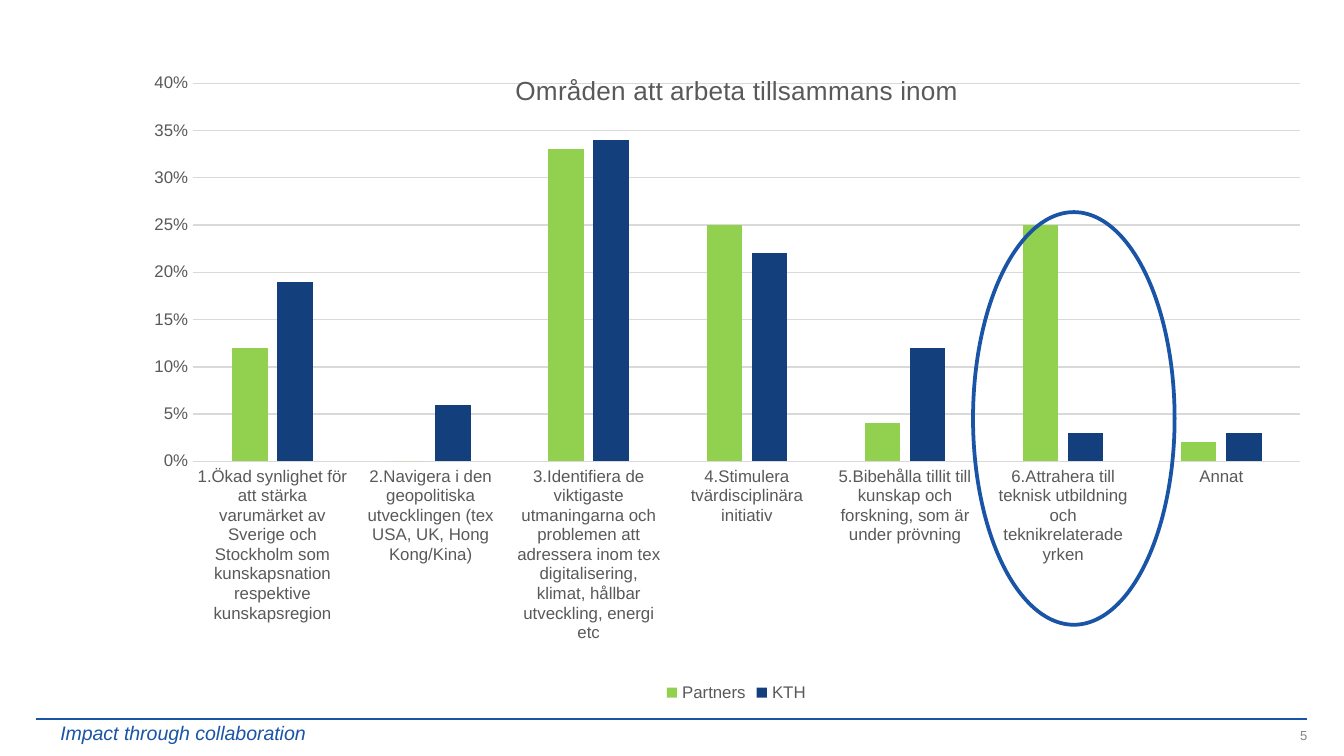
import dataclasses

import lxml.etree
import pptx
import pptx.chart.data
import pptx.dml.color
import pptx.enum.chart
import pptx.enum.shapes
import pptx.enum.text
import pptx.oxml.ns
import pptx.util
from pptx.util import Cm

qn = pptx.oxml.ns.qn


@dataclasses.dataclass(frozen=True)
class Theme:
    font: str = "Arial"
    blue: str = "1954A6"
    navy: str = "133F7D"
    green: str = "92D050"
    text_grey: str = "595959"
    number_grey: str = "848489"
    grid_grey: str = "D9D9D9"
    chart_title_size: float = 14
    chart_size: float = 9
    tagline_size: float = 10.5
    number_size: float = 7


AREAS = [
    "1.Ökad synlighet för att stärka varumärket av Sverige och Stockholm "
    "som kunskapsnation respektive kunskapsregion",
    "2.Navigera i den geopolitiska utvecklingen (tex USA, UK, Hong Kong/Kina)",
    "3.Identifiera de viktigaste utmaningarna och problemen att adressera "
    "inom tex digitalisering, klimat, hållbar utveckling, energi etc",
    "4.Stimulera tvärdisciplinära initiativ",
    "5.Bibehålla tillit till kunskap och forskning, som är under prövning",
    "6.Attrahera till teknisk utbildning och teknikrelaterade yrken",
    "Annat",
]
SHARES = {
    "Partners": [0.12, 0, 0.33, 0.25, 0.04, 0.25, 0.02],
    "KTH": [0.19, 0.06, 0.34, 0.22, 0.12, 0.03, 0.03],
}


def rgb(color):
    return pptx.dml.color.RGBColor.from_string(color)


def place_by_hand(layout, **settings):
    """Fill a c:layout element with a manual layout, in fractions of the chart."""
    for child in list(layout):
        layout.remove(child)
    manual = lxml.etree.SubElement(layout, qn("c:manualLayout"))
    for tag, value in settings.items():
        lxml.etree.SubElement(manual, qn(f"c:{tag}")).set("val", str(value))


def layout_of(parent, position):
    layout = parent.find(qn("c:layout"))
    if layout is None:
        layout = parent.makeelement(qn("c:layout"))
        parent.insert(position, layout)
    return layout


class SlideBuilder:
    def __init__(self, slide, theme):
        self.slide = slide
        self.theme = theme

    def style(self, font, size, color, italic=False):
        font.name = self.theme.font
        font.size = pptx.util.Pt(size)
        font.color.rgb = rgb(color)
        font.bold = False
        font.italic = italic

    def outline(self, line, color, width):
        line.color.rgb = rgb(color)
        line.width = pptx.util.Pt(width)

    def text(self, content, box, size, color, italic=False):
        frame = self.slide.shapes.add_textbox(*map(Cm, box)).text_frame
        frame.word_wrap = False
        frame.text = content
        self.style(frame.paragraphs[0].runs[0].font, size, color, italic)
        return frame

    def page_number(self, number, box):
        frame = self.text(number, box, self.theme.number_size, self.theme.number_grey)
        frame.margin_left = frame.margin_right = 0
        frame.margin_top = frame.margin_bottom = 0
        frame.vertical_anchor = pptx.enum.text.MSO_ANCHOR.MIDDLE
        frame.paragraphs[0].alignment = pptx.enum.text.PP_ALIGN.RIGHT

    def rule(self, left, right, top):
        rule = self.slide.shapes.add_connector(
            pptx.enum.shapes.MSO_CONNECTOR.STRAIGHT, Cm(left), Cm(top), Cm(right), Cm(top))
        self.outline(rule.line, self.theme.blue, 1)
        lxml.etree.SubElement(rule._element.spPr, qn("a:effectLst"))

    def highlight(self, box):
        ring = self.slide.shapes.add_shape(
            pptx.enum.shapes.MSO_SHAPE.OVAL, *map(Cm, box))
        ring.shadow.inherit = False
        ring.fill.background()
        self.outline(ring.line, self.theme.blue, 2)

    def column_chart(self, title, categories, shares, colors, box):
        theme = self.theme
        data = pptx.chart.data.CategoryChartData(number_format="0%")
        data.categories = categories
        for name, values in shares.items():
            data.add_series(name, values)
        chart = self.slide.shapes.add_chart(
            pptx.enum.chart.XL_CHART_TYPE.COLUMN_CLUSTERED, *map(Cm, box), data).chart
        self.style(chart.font, theme.chart_size, theme.text_grey)

        plot = chart.plots[0]
        plot.gap_width = 219
        plot.overlap = -27
        plot.vary_by_categories = False
        for series, color in zip(plot.series, colors):
            series.format.fill.solid()
            series.format.fill.fore_color.rgb = rgb(color)
        plot_area = chart._chartSpace.chart.plotArea
        place_by_hand(layout_of(plot_area, 0), layoutTarget="inner",
                      xMode="edge", yMode="edge", x=0.043, y=0.057, w=0.932, h=0.571)

        self.chart_title(chart, title)
        self.axes(chart)
        chart.has_legend = True
        chart.legend.position = pptx.enum.chart.XL_LEGEND_POSITION.BOTTOM
        chart.legend.include_in_layout = False
        self.style(chart.legend.font, theme.chart_size, theme.text_grey)

    def chart_title(self, chart, title):
        """Lay the title over the top of the plot."""
        chart.has_title = True
        frame = chart.chart_title.text_frame
        frame.text = title
        self.style(frame.paragraphs[0].runs[0].font,
                   self.theme.chart_title_size, self.theme.text_grey)
        element = chart.chart_title._element
        place_by_hand(layout_of(element, 1), xMode="edge", yMode="edge", x=0.31, y=0.035)
        element.find(qn("c:overlay")).set("val", "1")

    def axes(self, chart):
        theme = self.theme
        for axis in (chart.category_axis, chart.value_axis):
            axis.major_tick_mark = pptx.enum.chart.XL_TICK_MARK.NONE
            axis.minor_tick_mark = pptx.enum.chart.XL_TICK_MARK.NONE
            self.style(axis.tick_labels.font, theme.chart_size, theme.text_grey)
        self.outline(chart.category_axis.format.line, theme.grid_grey, 0.75)

        percent = chart.value_axis
        percent.minimum_scale = 0
        percent.maximum_scale = 0.4
        percent.major_unit = 0.05
        percent.tick_labels.number_format = "0%"
        percent.tick_labels.number_format_is_linked = False
        percent.format.line.fill.background()
        percent.has_major_gridlines = True
        self.outline(percent.major_gridlines.format.line, theme.grid_grey, 0.75)


def main():
    deck = pptx.Presentation()
    deck.slide_width, deck.slide_height = Cm(25.4), Cm(14.29)
    theme = Theme()
    blank_layout = deck.slide_layouts[6]
    page = SlideBuilder(deck.slides.add_slide(blank_layout), theme)

    page.rule(0.69, 24.71, 13.59)
    page.page_number("5", (19, 13.74, 5.71, 0.33))
    page.column_chart("Områden att arbeta tillsammans inom", AREAS, SHARES,
                      (theme.green, theme.navy), (2.69, 0.86, 22.45, 12.52))
    page.text("Impact through collaboration", (0.89, 13.51, 5.66, 0.74),
              theme.tagline_size, theme.blue, italic=True)
    page.highlight((18.39, 4.01, 3.81, 7.8))
    deck.save("out.pptx")


if __name__ == "__main__":
    main()
